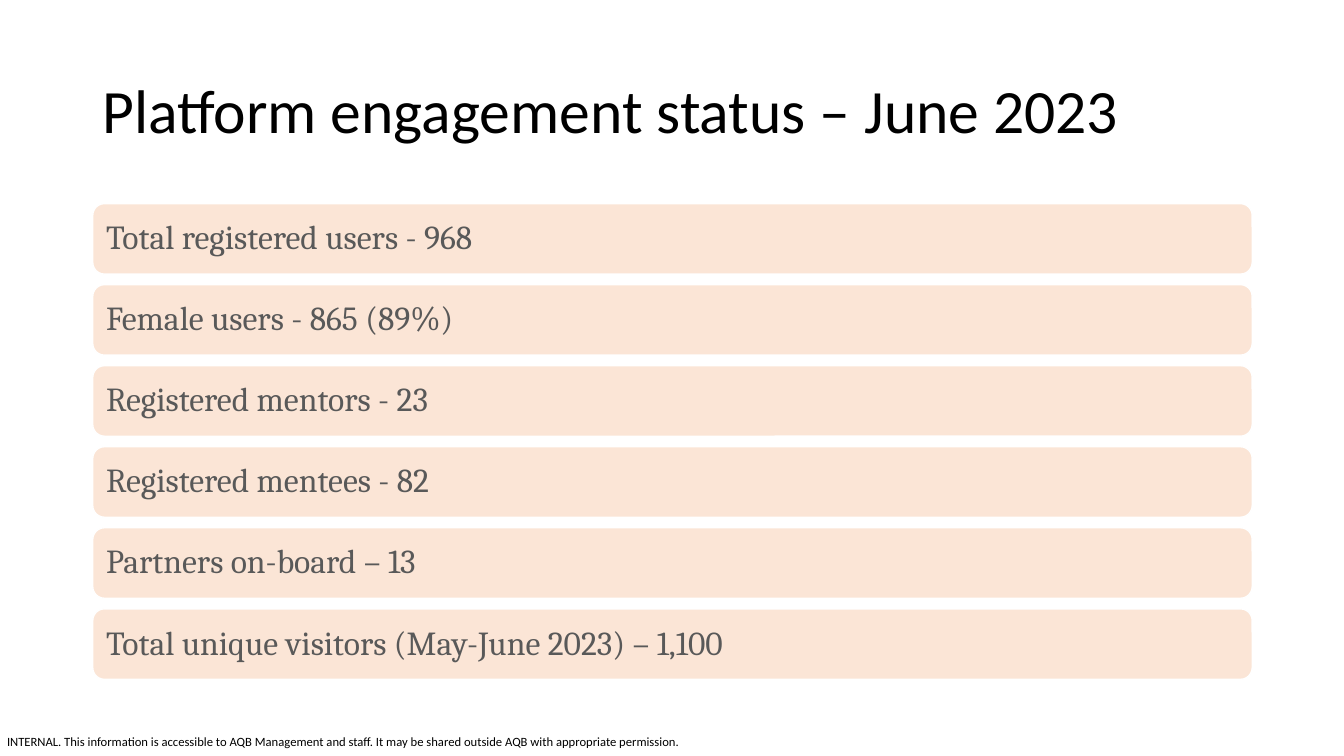
import pptx
import pptx.util
import pptx.dml.color
import pptx.enum.shapes
import pptx.enum.text

Inches = pptx.util.Inches
COLORS = {"black": "000000", "gray": "595959", "peach": "FBE5D6", "white": "FFFFFF"}

# Grid: one column of bars with a constant row pitch
LEFT, WIDTH = 0.92, 11.5
FIRST_TOP, BAR_HEIGHT, GAP = 2.02, 0.7, 0.104
METRICS = [
    "Total registered users - 968",
    "Female users - 865 (89%)",
    "Registered mentors - 23",
    "Registered mentees - 82",
    "Partners on-board – 13",
    "Total unique visitors (May-June 2023) – 1,100",
]


def rgb(name):
    return pptx.dml.color.RGBColor.from_string(COLORS[name])


def write(shape, text, font, size, color, side_inset, line_spacing=0.9):
    frame = shape.text_frame
    frame.word_wrap = True
    frame.vertical_anchor = pptx.enum.text.MSO_ANCHOR.MIDDLE
    frame.margin_left = frame.margin_right = Inches(side_inset)
    frame.margin_top = frame.margin_bottom = 0
    frame.text = text
    para = frame.paragraphs[0]
    para.alignment = pptx.enum.text.PP_ALIGN.LEFT
    para.line_spacing = line_spacing
    span = para.runs[0]
    span.font.name = font
    span.font.size = pptx.util.Pt(size)
    span.font.color.rgb = rgb(color)


deck = pptx.Presentation()
deck.slide_width, deck.slide_height = Inches(13.33), Inches(7.5)
page = deck.slides.add_slide(deck.slide_layouts[6])

# Classification footer
footer = page.shapes.add_textbox(Inches(0.07), Inches(7.28), Inches(6.9), Inches(0.15))
write(footer, "INTERNAL. This information is accessible to AQB Management and staff. "
      "It may be shared outside AQB with appropriate permission.",
      "Calibri", 9, "black", 0, 1.0)

# Title
title = page.shapes.add_textbox(Inches(LEFT), Inches(0.4), Inches(WIDTH), Inches(1.45))
write(title, "Platform engagement status – June 2023", "Calibri", 44, "black", 0.1)

# Metric bars
for row, metric in enumerate(METRICS):
    top = FIRST_TOP + row * (BAR_HEIGHT + GAP)
    bar = page.shapes.add_shape(
        pptx.enum.shapes.MSO_SHAPE.ROUNDED_RECTANGLE,
        Inches(LEFT), Inches(top), Inches(WIDTH), Inches(BAR_HEIGHT))
    bar.shadow.inherit = False
    bar.fill.solid()
    bar.fill.fore_color.rgb = rgb("peach")
    bar.line.color.rgb = rgb("white")
    bar.line.width = pptx.util.Pt(1)
    write(bar, metric, "Cambria", 24, "gray", 0.1)

deck.save("out.pptx")
